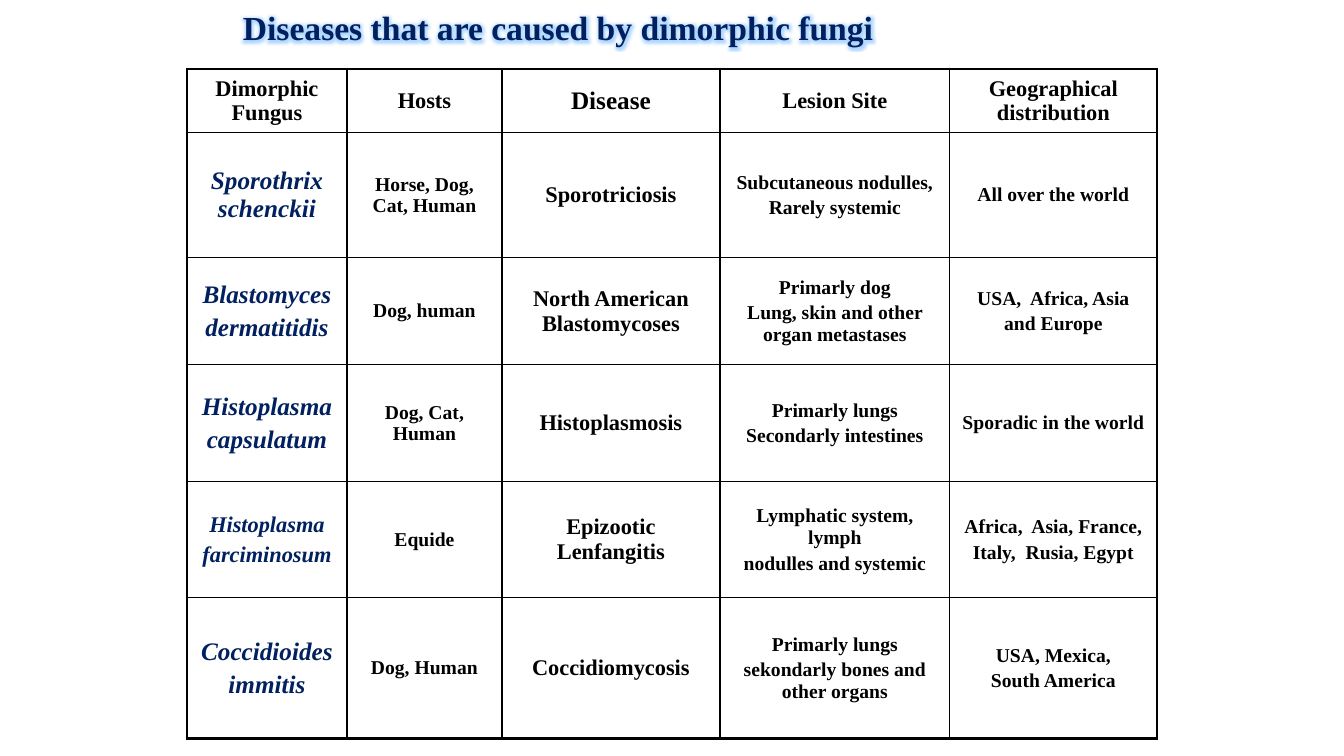
from dataclasses import dataclass

from lxml import etree
from pptx import Presentation
from pptx import util as u
from pptx.dml.color import RGBColor
from pptx.enum import text
from pptx.oxml import ns

SLIDE_WIDTH, SLIDE_HEIGHT = 1344, 756


@dataclass(frozen=True)
class Theme:
    font: str = "Times New Roman"
    ink: str = "000000"
    navy: str = "002060"
    paper: str = "FFFFFF"
    glow: str = "3399FF"
    glow_radius: int = 8
    title: int = 24
    header: int = 16
    header_disease: int = 18
    columns: tuple = (18, 14, 16, 14, 14)
    small_fungus: int = 16
    frame: float = 2.25
    grid: float = 1


THEME = Theme()

TITLE = "Diseases that are caused by dimorphic fungi"
COLUMN_WIDTHS = (160, 155, 218, 230, 207)
ROW_HEIGHTS = (60, 125, 107, 117, 116, 141)
# A line break inside an entry starts a new paragraph.
DISEASES = (
    ("Dimorphic Fungus", "Hosts", "Disease", "Lesion Site",
     "Geographical distribution"),
    ("Sporothrix schenckii", "Horse, Dog, Cat, Human", "Sporotriciosis",
     "Subcutaneous nodulles,\nRarely systemic", "All over the world"),
    ("Blastomyces\ndermatitidis", "Dog, human", "North American Blastomycoses",
     "Primarly dog\nLung, skin and other organ metastases",
     "USA,  Africa, Asia\nand Europe"),
    ("Histoplasma\ncapsulatum", "Dog, Cat, Human", "Histoplasmosis",
     "Primarly lungs\nSecondarly intestines", "Sporadic in the world"),
    ("Histoplasma\nfarciminosum", "Equide", "Epizootic Lenfangitis",
     "Lymphatic system, lymph\nnodulles and systemic",
     "Africa,  Asia, France,\nItaly,  Rusia, Egypt"),
    ("Coccidioides\nimmitis", "Dog, Human", "Coccidiomycosis",
     "Primarly lungs\nsekondarly bones and other organs",
     "USA, Mexica,\nSouth America"),
)
SIZE_EXCEPTIONS = {(0, 2): THEME.header_disease, (4, 0): THEME.small_fungus}


def px(length):
    return u.Emu(round(length * u.Inches(1) / 100.8))


def style_run(run, size, colour, italic=False):
    font_format = {"name": THEME.font, "size": u.Pt(size), "bold": True,
                   "italic": italic}
    for attribute, value in font_format.items():
        setattr(run.font, attribute, value)
    run.font.color.rgb = RGBColor.from_string(colour)


def add_glow(run):
    fill = run.font._element.find(ns.qn("a:solidFill"))
    effects = etree.Element(ns.qn("a:effectLst"))
    glow = etree.SubElement(effects, ns.qn("a:glow"),
                            rad=str(u.Pt(THEME.glow_radius)))
    colour = etree.SubElement(glow, ns.qn("a:srgbClr"), val=THEME.glow)
    etree.SubElement(colour, ns.qn("a:alpha"), val="40000")
    fill.addnext(effects)


def add_title(slide):
    frame = slide.shapes.add_textbox(px(233), px(-9), px(907), px(78)).text_frame
    frame.word_wrap = True
    frame.vertical_anchor = text.MSO_ANCHOR.MIDDLE
    heading = frame.paragraphs[0]
    heading.line_spacing = 0.9
    run = heading.add_run()
    run.text = TITLE
    style_run(run, THEME.title, THEME.navy)
    add_glow(run)


def set_borders(cell, widths):
    """Draw the sides named in widths (L, R, T, B) at widths in points."""
    properties = cell._tc.get_or_add_tcPr()
    for side, width in widths.items():
        line = etree.SubElement(properties, ns.qn(f"a:ln{side}"),
                                w=str(u.Pt(width)))
        fill = etree.SubElement(line, ns.qn("a:solidFill"))
        etree.SubElement(fill, ns.qn("a:srgbClr"), val=THEME.ink)


def write_cell(cell, entry, size, colour, italic):
    cell.vertical_anchor = text.MSO_ANCHOR.MIDDLE
    for index, words in enumerate(entry.split("\n")):
        frame = cell.text_frame
        paragraph = frame.add_paragraph() if index else frame.paragraphs[0]
        paragraph.alignment = text.PP_ALIGN.CENTER
        if index:
            paragraph.space_before = u.Pt(size * 0.2)
        run = paragraph.add_run()
        run.text = words
        style_run(run, size, colour, italic)


def add_disease_table(slide):
    row_count, column_count = len(ROW_HEIGHTS), len(COLUMN_WIDTHS)
    table = slide.shapes.add_table(
        row_count, column_count, px(187), px(69),
        px(sum(COLUMN_WIDTHS)), px(sum(ROW_HEIGHTS))).table
    table.first_row = table.horz_banding = False
    for column, width in zip(table.columns, COLUMN_WIDTHS):
        column.width = px(width)
    for row, height in zip(table.rows, ROW_HEIGHTS):
        row.height = px(height)

    for r, entries in enumerate(DISEASES):
        for c, entry in enumerate(entries):
            cell = table.cell(r, c)
            on_frame = {"L": c == 0, "R": c == column_count - 1,
                        "T": r == 0, "B": r == row_count - 1}
            set_borders(cell, {side: THEME.frame if outer else THEME.grid
                               for side, outer in on_frame.items()})
            cell.fill.solid()
            cell.fill.fore_color.rgb = RGBColor.from_string(THEME.paper)
            is_fungus = r > 0 and c == 0
            size = THEME.columns[c] if r else THEME.header
            write_cell(cell, entry, SIZE_EXCEPTIONS.get((r, c), size),
                       THEME.navy if is_fungus else THEME.ink, is_fungus)


def main():
    deck = Presentation()
    deck.slide_width, deck.slide_height = px(SLIDE_WIDTH), px(SLIDE_HEIGHT)
    slide = deck.slides.add_slide(deck.slide_layouts[6])
    add_title(slide)
    add_disease_table(slide)
    deck.save("out.pptx")


if __name__ == "__main__":
    main()
